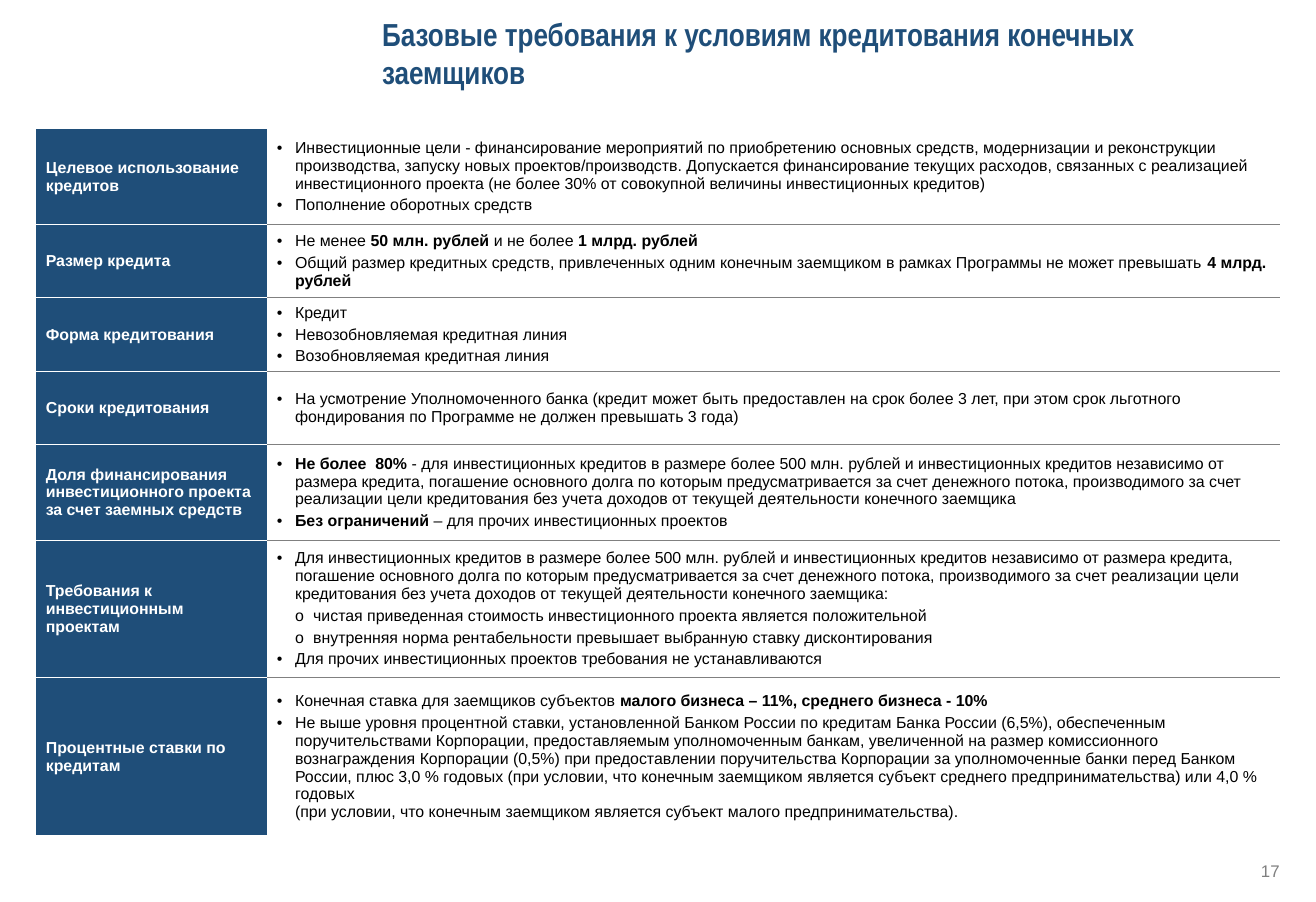
from dataclasses import dataclass

from lxml.etree import SubElement
from pptx import Presentation
from pptx.dml.color import RGBColor as RGB
from pptx.enum.text import MSO_ANCHOR as Anchor, MSO_AUTO_SIZE as AutoSize, PP_ALIGN as Align
from pptx.oxml.ns import qn
from pptx.util import Inches, Pt

# Content: (row height, label, points); ** marks bold, a leading "- " marks a sub-point
TITLE = "Базовые требования к условиям кредитования конечных заемщиков"
PAGE_NUMBER = "17"
REQUIREMENTS = [
    (1, "Целевое использование кредитов", [
        "Инвестиционные цели - финансирование мероприятий по приобретению основных средств, "
        "модернизации и реконструкции производства, запуску новых проектов/производств. "
        "Допускается финансирование текущих расходов, связанных с реализацией инвестиционного "
        "проекта (не более 30% от совокупной величины инвестиционных кредитов)",
        "Пополнение оборотных средств",
    ]),
    (0.77, "Размер кредита", [
        "Не менее **50 млн. рублей** и не более **1 млрд. рублей**",
        "Общий размер кредитных средств, привлеченных одним конечным заемщиком в рамках "
        "Программы не может превышать **4 млрд. рублей**",
    ]),
    (0.77, "Форма кредитования", [
        "Кредит",
        "Невозобновляемая кредитная линия",
        "Возобновляемая кредитная линия",
    ]),
    (0.77, "Сроки кредитования", [
        "На усмотрение Уполномоченного банка (кредит может быть предоставлен на срок более 3 лет, "
        "при этом срок льготного фондирования по Программе не должен превышать 3 года)",
    ]),
    (1, "Доля финансирования инвестиционного проекта за счет заемных средств", [
        "**Не более  80% **- для инвестиционных кредитов в размере более 500 млн. рублей и "
        "инвестиционных кредитов независимо от размера кредита, погашение основного долга по "
        "которым предусматривается за счет денежного потока, производимого за счет реализации "
        "цели кредитования без учета доходов от текущей деятельности конечного заемщика",
        "**Без ограничений** – для прочих инвестиционных проектов",
    ]),
    (1.44, "Требования к инвестиционным проектам", [
        "Для инвестиционных кредитов в размере более 500 млн. рублей и инвестиционных кредитов "
        "независимо от размера кредита, погашение основного долга по которым предусматривается "
        "за счет денежного потока, производимого за счет реализации цели кредитования без учета "
        "доходов от текущей деятельности конечного заемщика:",
        "- чистая приведенная стоимость инвестиционного проекта является положительной",
        "- внутренняя норма рентабельности превышает выбранную ставку дисконтирования",
        "Для прочих инвестиционных проектов требования не устанавливаются",
    ]),
    (1.66, "Процентные ставки по кредитам", [
        "Конечная ставка для заемщиков субъектов **малого бизнеса – 11%, среднего бизнеса - 10%**",
        "Не выше уровня процентной ставки, установленной Банком России по кредитам Банка России "
        "(6,5%), обеспеченным поручительствами Корпорации, предоставляемым уполномоченным банкам, "
        "увеличенной на размер комиссионного вознаграждения Корпорации (0,5%) при предоставлении "
        "поручительства Корпорации за уполномоченные банки перед Банком России, плюс 3,0 % годовых "
        "(при условии, что конечным заемщиком является субъект среднего предпринимательства) или "
        "4,0 % годовых \n(при условии, что конечным заемщиком является субъект малого "
        "предпринимательства).",
    ]),
]
COLUMN_WIDTHS = (2.42, 10.6)
POINT_INDENT = 0.19


@dataclass(frozen=True)
class Theme:
    navy: str = "1F4E79"
    white: str = "FFFFFF"
    black: str = "000000"
    grey: str = "808080"
    body_font: str = "Arial"
    title_font: str = "Arial Narrow"
    title_size: float = 24
    body_size: float = 12
    number_size: float = 12.7


THEME = Theme()


def style(paragraph, size, color, bold=None, font=THEME.body_font):
    paragraph.font.name, paragraph.font.size, paragraph.font.bold = font, Pt(size), bold
    paragraph.font.color.rgb = RGB.from_string(color)


def set_borders(cell, top, bottom):
    properties = cell._tc.get_or_add_tcPr()
    for side, color in (("L", None), ("R", None), ("T", top), ("B", bottom)):
        line = SubElement(properties, qn(f"a:ln{side}"), w=str(Pt(1)))
        if color:
            SubElement(SubElement(line, qn("a:solidFill")), qn("a:srgbClr"), val=color)
        else:
            SubElement(line, qn("a:noFill"))


def add_bullet(paragraph, symbol, level):
    properties = paragraph._p.get_or_add_pPr()
    properties.set("marL", str(Inches(POINT_INDENT * level)))
    properties.set("indent", str(-Inches(POINT_INDENT)))
    SubElement(properties, qn("a:buFont"), typeface=THEME.body_font)
    SubElement(properties, qn("a:buChar"), char=symbol)


def write_point(paragraph, point, first):
    is_sub = point.startswith("- ")
    add_bullet(paragraph, "o" if is_sub else "•", 2 if is_sub else 1)
    style(paragraph, THEME.body_size, THEME.black)
    paragraph.space_before = Pt(0 if first else 3)
    for part, phrase in enumerate(point.removeprefix("- ").split("**")):
        for number, text in enumerate(phrase.split("\n")):
            if number:
                paragraph.add_line_break()
            if text:
                run = paragraph.add_run()
                run.text, run.font.bold = text, part % 2 == 1


def add_title(slide):
    title = slide.shapes.title
    title.left, title.top, title.width, title.height = map(Inches, (3.9, 0.17, 9.5, 0.76))
    frame = title.text_frame
    frame.text, frame.word_wrap = TITLE, True
    frame.auto_size, frame.vertical_anchor = AutoSize.NONE, Anchor.MIDDLE
    frame.paragraphs[0].alignment = Align.LEFT
    style(frame.paragraphs[0], THEME.title_size, THEME.navy, True, THEME.title_font)


def add_requirements(slide):
    height = sum(row_height for row_height, _, _ in REQUIREMENTS)
    table = slide.shapes.add_table(
        len(REQUIREMENTS), len(COLUMN_WIDTHS), Inches(0.38), Inches(1.35),
        Inches(sum(COLUMN_WIDTHS)), Inches(height)).table
    table.first_row = table.horz_banding = False
    for column, width in zip(table.columns, COLUMN_WIDTHS):
        column.width = Inches(width)

    last = len(REQUIREMENTS) - 1
    for index, (row_height, label, points) in enumerate(REQUIREMENTS):
        table.rows[index].height = Inches(row_height)
        label_cell, points_cell = table.cell(index, 0), table.cell(index, 1)
        for cell, rule in ((label_cell, THEME.white), (points_cell, THEME.grey)):
            cell.vertical_anchor = Anchor.MIDDLE
            set_borders(cell, rule if index else THEME.white,
                        rule if index < last else THEME.white)

        # Label on navy
        label_cell.fill.solid()
        label_cell.fill.fore_color.rgb = RGB.from_string(THEME.navy)
        label_cell.text_frame.text = label
        style(label_cell.text_frame.paragraphs[0], THEME.body_size, THEME.white, True)

        # Bulleted points
        points_cell.fill.background()
        frame = points_cell.text_frame
        for number, point in enumerate(points):
            paragraph = frame.add_paragraph() if number else frame.paragraphs[0]
            write_point(paragraph, point, first=number == 0)


def add_page_number(slide):
    frame = slide.shapes.add_textbox(*map(Inches, (12.98, 9.03, 0.42, 0.2))).text_frame
    frame.margin_left = frame.margin_right = frame.margin_top = frame.margin_bottom = 0
    frame.word_wrap, frame.text = True, PAGE_NUMBER
    number = frame.paragraphs[0]
    number.alignment, number.line_spacing = Align.RIGHT, Pt(14.3)
    style(number, THEME.number_size, THEME.grey)


def main():
    deck = Presentation()
    deck.slide_width, deck.slide_height = Inches(13.78), Inches(9.45)
    slide = deck.slides.add_slide(deck.slide_layouts[5])
    add_title(slide)
    add_requirements(slide)
    add_page_number(slide)
    deck.save("out.pptx")


if __name__ == "__main__":
    main()
